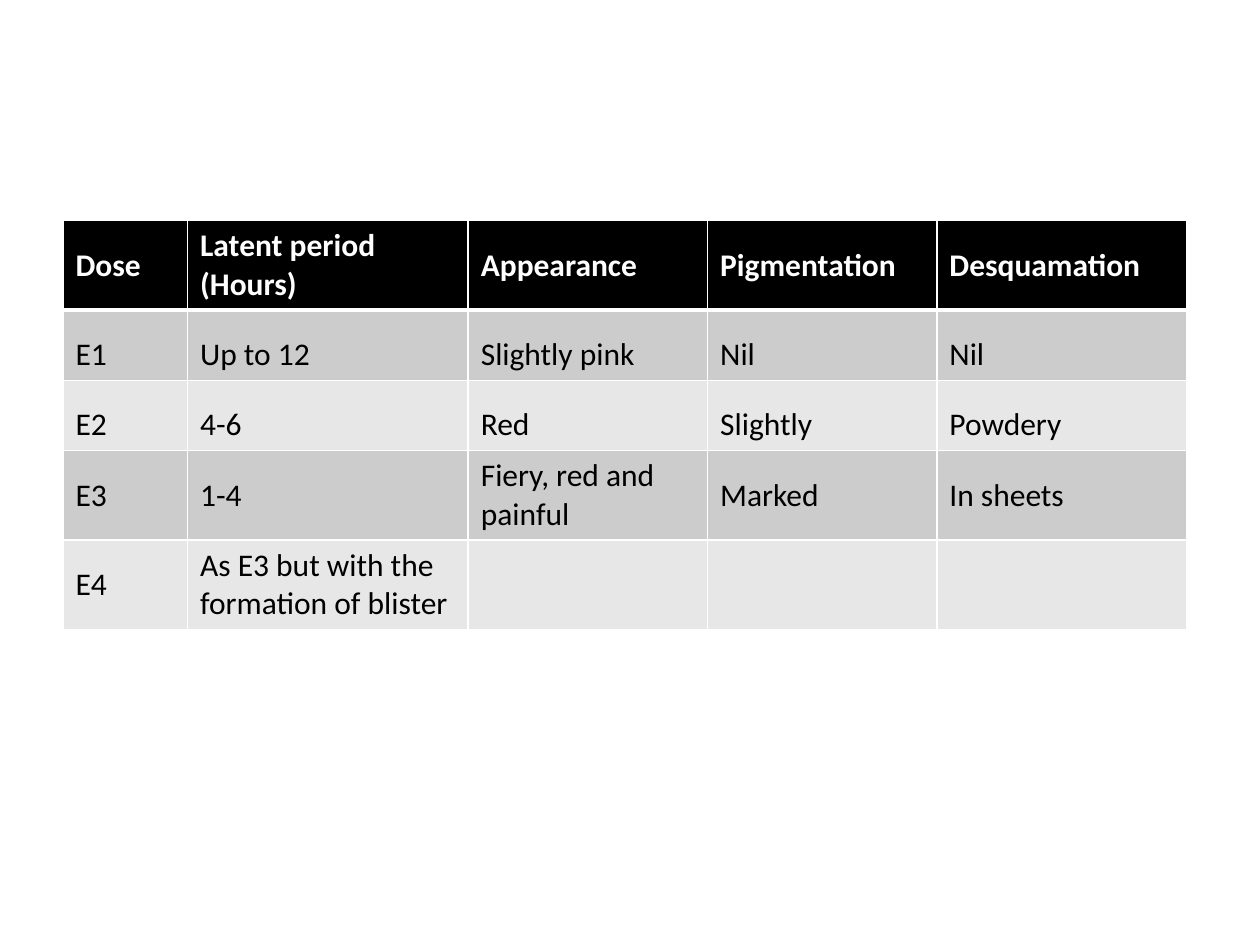
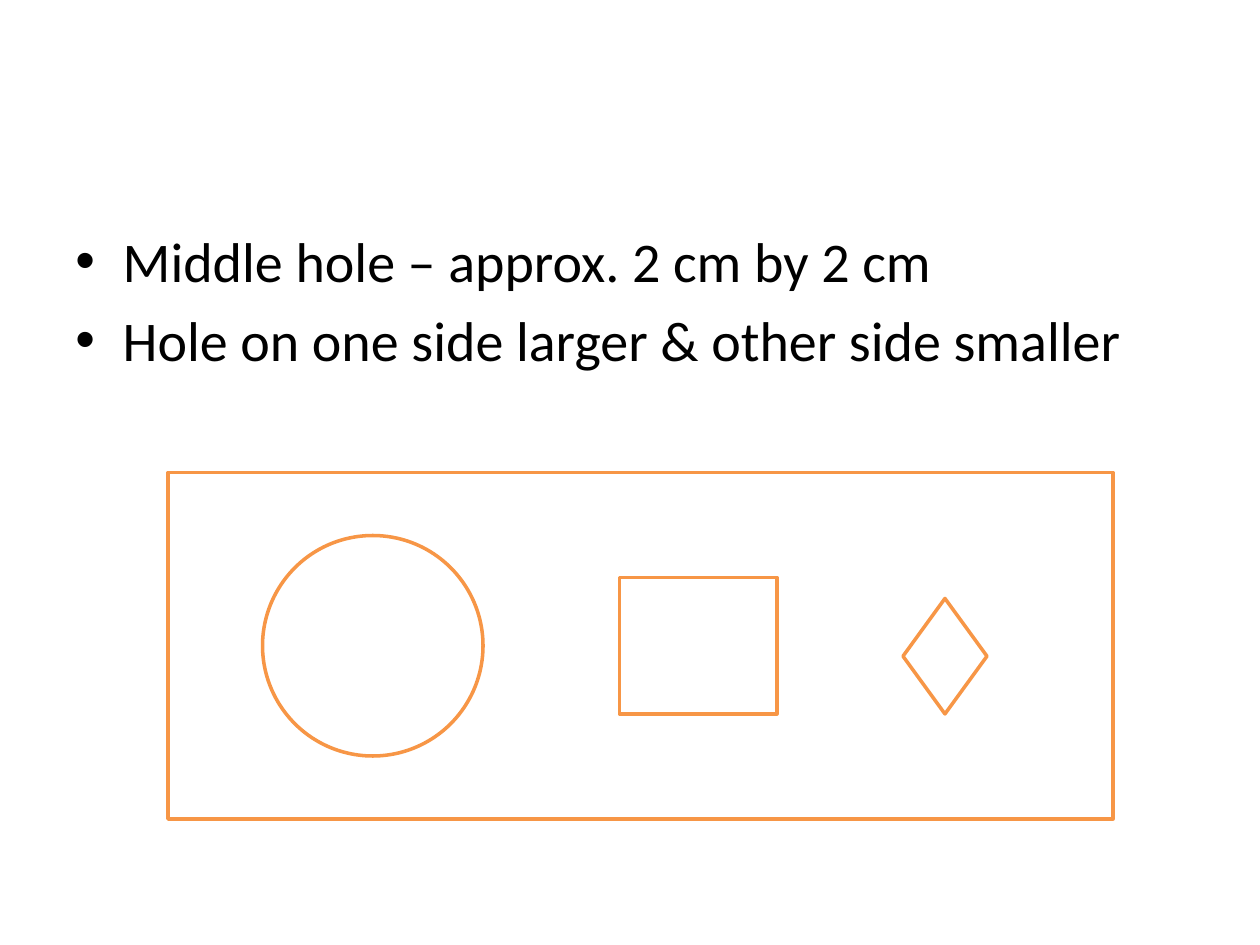
from typing import NamedTuple

import pptx
import pptx.dml.color
import pptx.enum.shapes
import pptx.oxml
import pptx.oxml.ns
import pptx.util
from lxml import etree

Pt = pptx.util.Pt
SHAPE = pptx.enum.shapes.MSO_SHAPE

FONT = "Calibri"
COLORS = {
    "text": "000000",
    "paper": "FFFFFF",
    "header": "000000",
    "band_dark": "CCCCCC",
    "band_light": "E7E7E7",
    "outline": "F79646",
}
CONTENT_LEFT, CONTENT_TOP = 36, 126

# Dose table: one list per table row
DOSE_ROWS = [
    ["Dose", "Latent period\n(Hours)", "Appearance", "Pigmentation", "Desquamation"],
    ["E1", "Up to 12", "Slightly pink", "Nil", "Nil"],
    ["E2", "4-6", "Red", "Slightly", "Powdery"],
    ["E3", "1-4", "Fiery, red and painful", "Marked", "In sheets"],
    ["E4", "As E3 but with the formation of blister", "", "", ""],
]
COLUMN_WIDTHS = [71.2, 160.4, 136.8, 131, 142.6]
TWO_LINE_CELLS = {(0, 1), (3, 2), (4, 1)}
ONE_LINE_HEIGHT, TWO_LINE_HEIGHT = 40, 51

HOLE_NOTES = [
    "Middle hole – approx. 2 cm by 2 cm",
    "Hole on one side larger & other side smaller",
]


class Outline(NamedTuple):
    kind: SHAPE
    left: float
    top: float
    width: float
    height: float


# The outer rectangle, then its holes from large to small
HOLE_OUTLINES = [
    Outline(SHAPE.RECTANGLE, 96, 270, 540, 198),
    Outline(SHAPE.FLOWCHART_CONNECTOR, 150, 306, 126, 126),
    Outline(SHAPE.RECTANGLE, 354, 330, 90, 78),
    Outline(SHAPE.DIAMOND, 516, 342, 48, 66),
]


def rgb(name: str) -> pptx.dml.color.RGBColor:
    return pptx.dml.color.RGBColor.from_string(COLORS[name])


def style_font(para, size: float, color: str, bold: bool = False) -> None:
    para.font.name = FONT
    para.font.size = Pt(size)
    para.font.bold = bold
    para.font.color.rgb = rgb(color)


def add_bullet(para, indent: float) -> None:
    props = para._p.get_or_add_pPr()
    props.set("marL", str(Pt(indent)))
    props.set("indent", str(-Pt(indent)))
    for tag, key, value in [("a:buFont", "typeface", "Arial"), ("a:buChar", "char", "•")]:
        etree.SubElement(props, pptx.oxml.ns.qn(tag)).set(key, value)


def set_borders(cell, top: float, bottom: float) -> None:
    props = cell._tc.get_or_add_tcPr()
    widths = {"lnL": 1, "lnR": 1, "lnT": top, "lnB": bottom}
    for position, (side, width) in enumerate(widths.items()):
        line = pptx.oxml.parse_xml(
            f'<a:{side} {pptx.oxml.ns.nsdecls("a")} w="{Pt(width)}"><a:solidFill>'
            f'<a:srgbClr val="{COLORS["paper"]}"/></a:solidFill></a:{side}>'
        )
        props.insert(position, line)


def add_dose_table(page) -> None:
    frame = page.shapes.add_table(
        len(DOSE_ROWS), len(COLUMN_WIDTHS), Pt(CONTENT_LEFT), Pt(CONTENT_TOP),
        Pt(sum(COLUMN_WIDTHS)), Pt(ONE_LINE_HEIGHT * len(DOSE_ROWS)),
    )
    table = frame.table
    table.horz_banding = False
    for column, width in zip(table.columns, COLUMN_WIDTHS):
        column.width = Pt(width)
    tall_rows = {row for row, _ in TWO_LINE_CELLS}
    for row, texts in enumerate(DOSE_ROWS):
        table.rows[row].height = Pt(TWO_LINE_HEIGHT if row in tall_rows else ONE_LINE_HEIGHT)
        is_header = row == 0
        band = "header" if is_header else ("band_dark" if row % 2 else "band_light")
        for column, text in enumerate(texts):
            cell = table.cell(row, column)
            cell.text = text
            cell.fill.solid()
            cell.fill.fore_color.rgb = rgb(band)
            set_borders(cell, top=3 if row == 1 else 1, bottom=3 if is_header else 1)
            for para in cell.text_frame.paragraphs:
                if text and (row, column) not in TWO_LINE_CELLS:
                    para.line_spacing = 1.5
                style_font(para, 18, "paper" if is_header else "text", is_header)


def add_notes(page, notes: list[str]) -> None:
    box = page.shapes.add_textbox(Pt(CONTENT_LEFT), Pt(CONTENT_TOP), Pt(648), Pt(356.4))
    box.text_frame.word_wrap = True
    box.text_frame.text = "\n".join(notes)
    for para in box.text_frame.paragraphs:
        para.space_before = Pt(6.4)
        add_bullet(para, 27)
        style_font(para, 32, "text")


def add_outline(page, outline: Outline) -> None:
    kind, *bounds = outline
    shape = page.shapes.add_shape(kind, *map(Pt, bounds))
    shape.shadow.inherit = False
    shape.fill.solid()
    shape.fill.fore_color.rgb = rgb("paper")
    shape.line.color.rgb = rgb("outline")
    shape.line.width = Pt(2)


def main() -> None:
    deck = pptx.Presentation()
    deck.slide_width, deck.slide_height = Pt(720), Pt(540)
    blank = deck.slide_layouts[6]

    # Slide 1: dose table
    add_dose_table(deck.slides.add_slide(blank))

    # Slide 2: notes and the three holes
    page = deck.slides.add_slide(blank)
    add_notes(page, HOLE_NOTES)
    for outline in HOLE_OUTLINES:
        add_outline(page, outline)

    deck.save("out.pptx")


if __name__ == "__main__":
    main()
